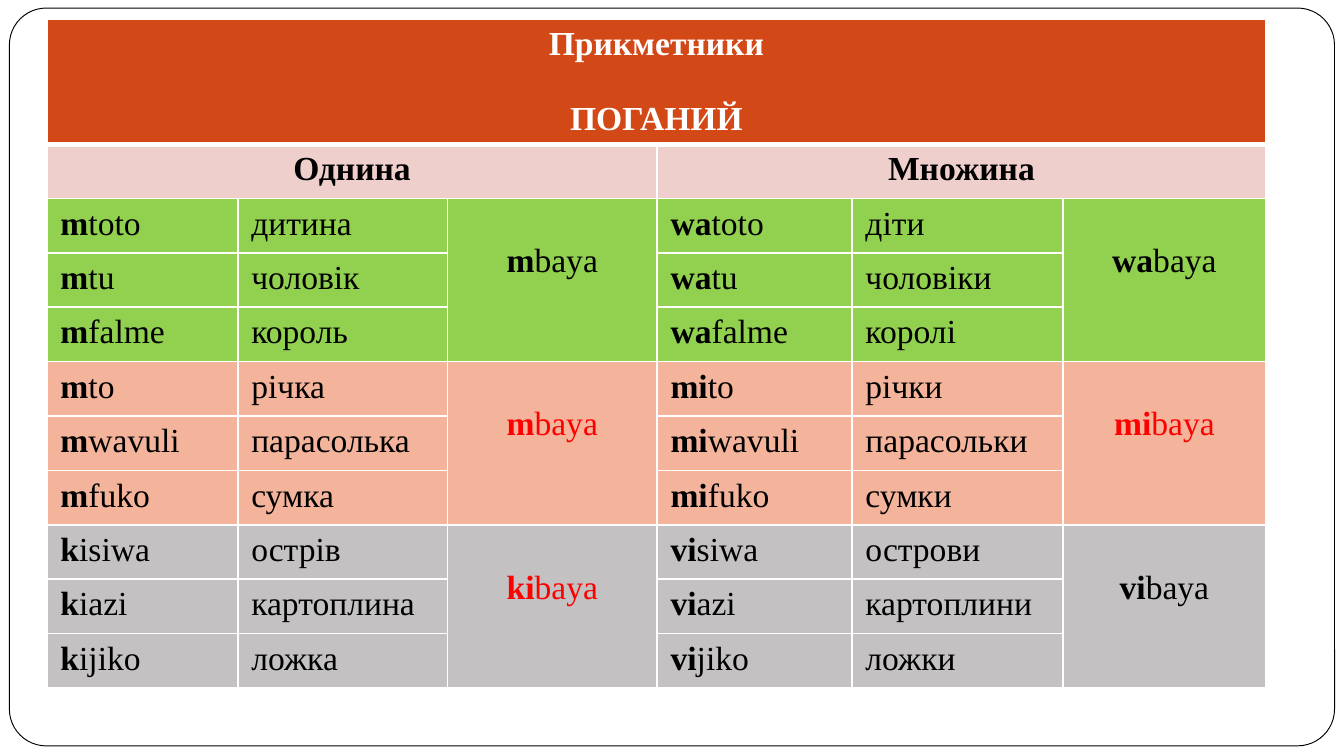
"""Builds a slide with a table of Swahili adjective agreement."""
import lxml.etree
import pptx
import pptx.dml.color
import pptx.enum.shapes
import pptx.enum.text
import pptx.oxml.ns
import pptx.util

Inches = pptx.util.Inches
Pt = pptx.util.Pt
COLORS = {
    "white": "FFFFFF", "black": "000000", "red": "FF0000", "title": "D34817",
    "number": "EFCFCC", "people": "92D050", "nature": "F4B39B", "things": "C3C1C1",
}
GROUPS = [
    ("people", ("m", "black"), ("wa", "black"), [
        ("m", "toto", "дитина", "wa", "toto", "діти"),
        ("m", "tu", "чоловік", "wa", "tu", "чоловіки"),
        ("m", "falme", "король", "wa", "falme", "королі")]),
    ("nature", ("m", "red"), ("mi", "red"), [
        ("m", "to", "річка", "mi", "to", "річки"),
        ("m", "wavuli", "парасолька", "mi", "wavuli", "парасольки"),
        ("m", "fuko", "сумка", "mi", "fuko", "сумки")]),
    ("things", ("ki", "red"), ("vi", "black"), [
        ("k", "isiwa", "острів", "vi", "siwa", "острови"),
        ("k", "iazi", "картоплина", "vi", "azi", "картоплини"),
        ("k", "ijiko", "ложка", "vi", "jiko", "ложки")]),
]


def rgb(name):
    return pptx.dml.color.RGBColor.from_string(COLORS[name])


def write(para, bold, plain="", color="black", centered=False):
    para.font.name = "Times New Roman"
    para.font.size = Pt(18)
    para.font.color.rgb = rgb(color)
    if centered:
        para.alignment = pptx.enum.text.PP_ALIGN.CENTER
    for text, is_bold in ((bold, True), (plain, False)):
        if text:
            span = para.add_run()
            span.text = text
            span.font.bold = is_bold


deck = pptx.Presentation()
deck.slide_width = Inches(10)
deck.slide_height = Inches(10 * 9 / 16)
page = deck.slides.add_slide(deck.slide_layouts[6])

frame = page.shapes.add_shape(
    pptx.enum.shapes.MSO_SHAPE.ROUNDED_RECTANGLE,
    Inches(0.07), Inches(0.06), Inches(9.86), Inches(5.49))
frame.adjustments[0] = 0.05
frame.shadow.inherit = False
frame.fill.solid()
frame.fill.fore_color.rgb = rgb("white")
frame.line.color.rgb = rgb("black")
frame.line.width = Pt(0.5)

table = page.shapes.add_table(
    11, 6, Inches(0.35), Inches(0.14), Inches(9.07), Inches(4.97)).table
for column, width in zip(table.columns, (1.42, 1.56, 1.56, 1.45, 1.57, 1.51)):
    column.width = Inches(width)
for row in table.rows:
    row.height = Inches(4.05 / 10)
table.rows[0].height = Inches(0.92)

fills = ["title", "number"] + [group[0] for group in GROUPS for _ in range(3)]
for row_index, fill in enumerate(fills):
    for column_index in range(6):
        cell = table.cell(row_index, column_index)
        properties = cell._tc.get_or_add_tcPr()
        for side in ("L", "R", "T", "B"):
            thick = (row_index, side) in ((0, "B"), (1, "T"))
            border = lxml.etree.SubElement(
                properties, pptx.oxml.ns.qn(f"a:ln{side}"), w=str(Pt(3 if thick else 1)))
            paint = lxml.etree.SubElement(border, pptx.oxml.ns.qn("a:solidFill"))
            lxml.etree.SubElement(
                paint, pptx.oxml.ns.qn("a:srgbClr"), val=COLORS["white"])
        cell.fill.solid()
        cell.fill.fore_color.rgb = rgb(fill)

title = table.cell(0, 0)
title.merge(table.cell(0, 5))
write(title.text_frame.paragraphs[0], "Прикметники", color="white", centered=True)
adjective = title.text_frame.add_paragraph()
adjective.space_before = Pt(20)
write(adjective, "ПОГАНИЙ", color="white", centered=True)

for left, number in ((0, "Однина"), (3, "Множина")):
    heading = table.cell(1, left)
    heading.merge(table.cell(1, left + 2))
    write(heading.text_frame.paragraphs[0], number, centered=True)

for group_index, (_, singular, plural, words) in enumerate(GROUPS):
    top = 2 + 3 * group_index
    for left, (prefix, color) in ((2, singular), (5, plural)):
        cell = table.cell(top, left)
        cell.merge(table.cell(top + 2, left))
        cell.margin_top = Inches(0.33)
        write(cell.text_frame.paragraphs[0], prefix, "baya", color, True)
    for row_index, entry in enumerate(words, top):
        for left, (prefix, stem, meaning) in ((0, entry[:3]), (3, entry[3:])):
            write(table.cell(row_index, left).text_frame.paragraphs[0], prefix, stem)
            write(table.cell(row_index, left + 1).text_frame.paragraphs[0], "", meaning)

deck.save("out.pptx")
